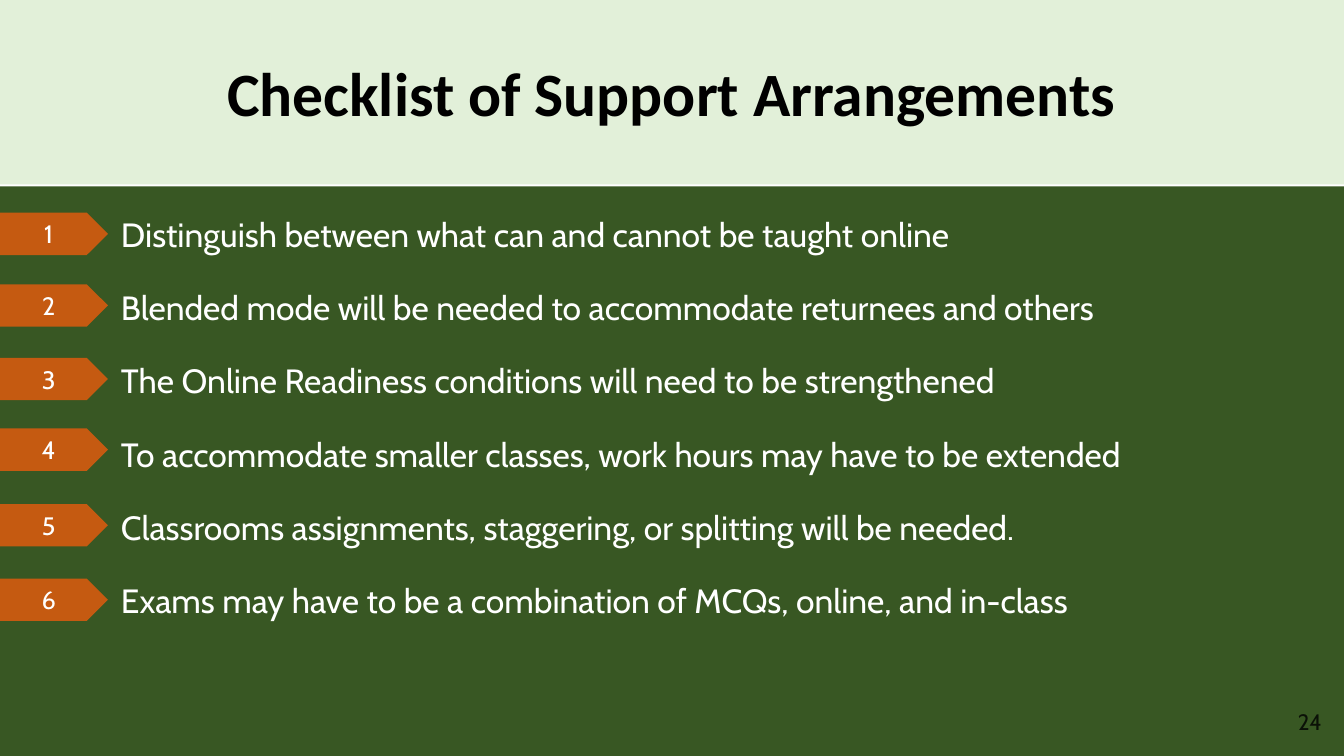
from lxml import etree
from pptx import Presentation
from pptx.dml.color import RGBColor
from pptx.enum.shapes import MSO_SHAPE
from pptx.enum.text import MSO_ANCHOR, MSO_AUTO_SIZE, PP_ALIGN
from pptx.oxml.ns import qn
from pptx.util import Inches, Pt

PENTAGON = MSO_SHAPE.PENTAGON
MIDDLE, TOP = MSO_ANCHOR.MIDDLE, MSO_ANCHOR.TOP
LEFT, CENTER, RIGHT = PP_ALIGN.LEFT, PP_ALIGN.CENTER, PP_ALIGN.RIGHT
NO_FIT = MSO_AUTO_SIZE.NONE

HEADING = "Checklist of Support Arrangements"
ARRANGEMENTS = [
    "Distinguish between what can and cannot be taught online",
    "Blended mode will be needed to accommodate returnees and others",
    "The Online Readiness conditions will need to be strengthened",
    "To accommodate smaller classes, work hours may have to be extended",
    "Classrooms assignments, staggering, or splitting will be needed.",
    "Exams may have to be a combination of MCQs, online, and in-class",
]
TAG_TOPS = [28.13, 37.6, 47.33, 56.67, 66.67, 76.53]


def color(hex_string):
    return RGBColor.from_string(hex_string)


class ChecklistSlide:
    heading_font, text_font = "Calibri", "Cabin"
    black, white = "000000", "FFFFFF"
    pale, dark, accent = "E2F0D9", "385723", "C55A11"

    def __init__(self, deck):
        self.deck = deck
        self.page = deck.slides.add_slide(deck.slide_layouts[1])

    def across(self, percent):
        return round(self.deck.slide_width * percent / 100)

    def down(self, percent):
        return round(self.deck.slide_height * percent / 100)

    def area(self, left, top, width, height):
        return self.across(left), self.down(top), self.across(width), self.down(height)

    def place(self, box, *area):
        box.left, box.top, box.width, box.height = self.area(*area)

    def paint(self, box, hex_string):
        box.fill.solid()
        box.fill.fore_color.rgb = color(hex_string)
        box.line.fill.background()

    def set_text(self, box, text, size, font, hex_string, align, anchor=MIDDLE, bold=False):
        frame = box.text_frame
        frame.text = text
        frame.word_wrap = True
        frame.auto_size = NO_FIT
        frame.vertical_anchor = anchor
        for para in frame.paragraphs:
            para.alignment = align
            for span in para.runs:
                span.font.size = Pt(size)
                span.font.name = font
                span.font.bold = bold
                span.font.color.rgb = color(hex_string)
        return frame

    def title(self, text, height):
        box = self.page.shapes.title
        self.place(box, 0, 0, 100, height)
        self.paint(box, self.pale)
        self.set_text(box, text, 44, self.heading_font, self.black, CENTER, bold=True)

    def body(self, lines, top):
        box = self.page.placeholders[1]
        self.place(box, 0, top, 100, 100 - top)
        frame = self.set_text(box, "\n".join(lines), 24, self.text_font, self.white, LEFT, TOP)
        frame.margin_left, frame.margin_right = self.across(9), self.across(3.75)
        for para in frame.paragraphs:
            para.line_spacing = 1.4
            para.space_before = para.space_after = Pt(6)
            settings = para._p.get_or_add_pPr()
            settings.set("marL", "0")
            settings.set("indent", "0")
            etree.SubElement(settings, qn("a:buNone"))

    def pentagon(self, hex_string, *area):
        box = self.page.shapes.add_shape(PENTAGON, *self.area(*area))
        box.shadow.inherit = False
        self.paint(box, hex_string)
        return box

    def backdrop(self, top):
        box = self.pentagon(self.dark, 0, top, 100, 100 - top)
        box.adjustments[0] = 0
        self.page.shapes.title._element.addprevious(box._element)

    def tag(self, number, top):
        box = self.pentagon(self.accent, 0, top, 8.03, 5.6)
        self.set_text(box, str(number), 18, self.text_font, self.white, CENTER)

    def page_number(self, number):
        box = self.page.shapes.add_textbox(*self.area(94.3, 92.8, 4.8, 5.33))
        frame = self.set_text(box, str(number), 16, self.text_font, self.black, RIGHT)
        para = frame.paragraphs[0]
        para.space_after = Pt(6)
        tint = para.runs[0]._r.find(".//" + qn("a:srgbClr"))
        etree.SubElement(tint, qn("a:alpha")).set("val", "80000")


def main():
    deck = Presentation()
    deck.slide_width, deck.slide_height = Inches(13.33), Inches(7.5)
    checklist = ChecklistSlide(deck)
    checklist.backdrop(24.67)
    checklist.title(HEADING, 24.4)
    checklist.body(ARRANGEMENTS, 25.47)
    for number, top in enumerate(TAG_TOPS, 1):
        checklist.tag(number, top)
    checklist.page_number(24)
    deck.save("out.pptx")


if __name__ == "__main__":
    main()
